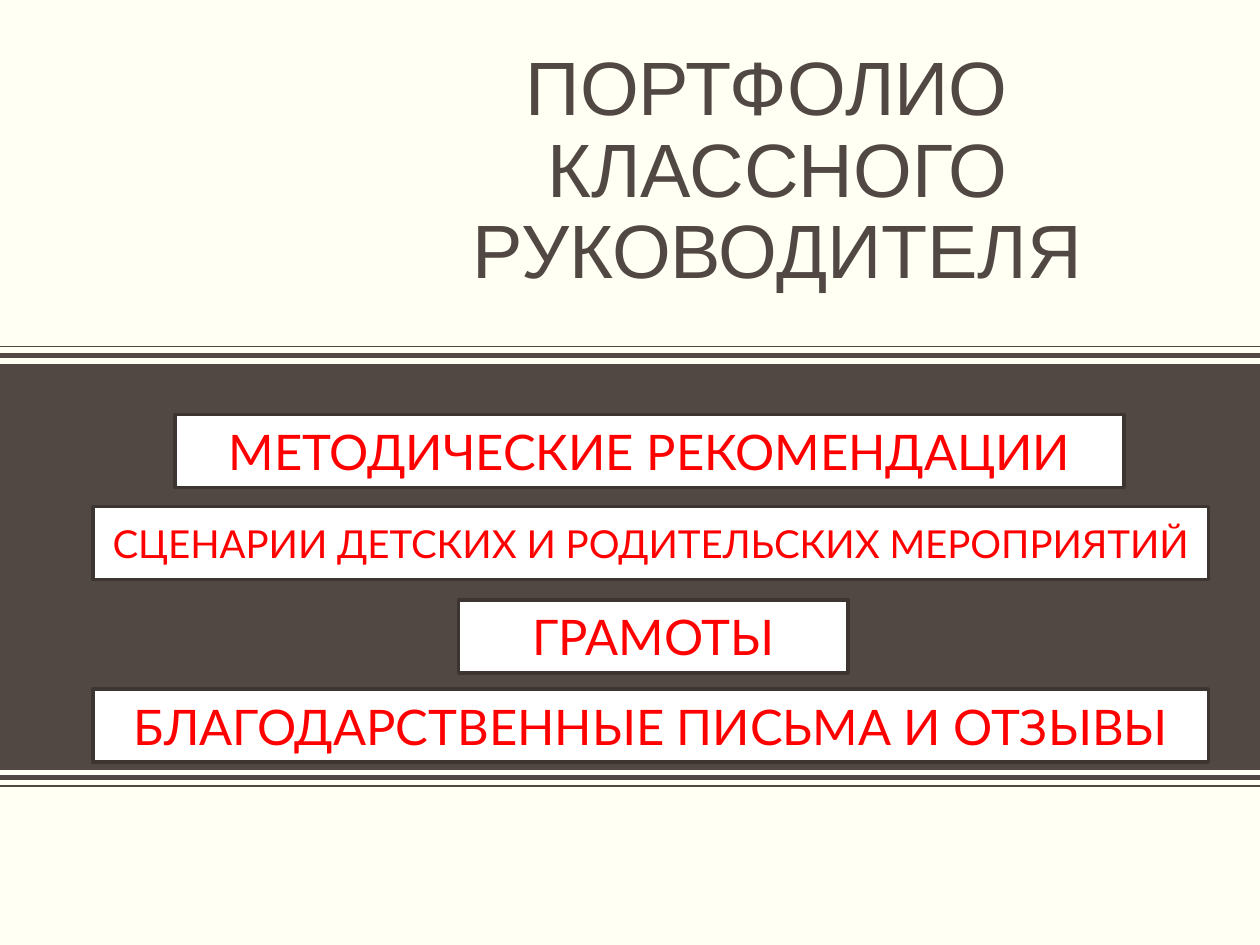
from pptx import Presentation
from pptx import util as u
from pptx.dml.color import RGBColor
from pptx.enum import shapes, text
from pptx.oxml.ns import qn
from lxml import etree

CREAM = RGBColor(0xFF, 0xFF, 0xF3)
BROWN = RGBColor(0x51, 0x48, 0x43)
EDGE = RGBColor(0x3C, 0x35, 0x32)
WHITE = RGBColor(0xFF, 0xFF, 0xFF)
RED = RGBColor(0xFF, 0x00, 0x00)


def add_rect(slide, box, fill):
    rect = slide.shapes.add_shape(
        shapes.MSO_SHAPE.RECTANGLE, *map(u.Inches, box))
    rect.shadow.inherit = False
    rect.fill.solid()
    rect.fill.fore_color.rgb = fill
    rect.line.fill.background()
    return rect


def add_rule(slide, left, top, width, weight):
    rule = slide.shapes.add_connector(
        shapes.MSO_CONNECTOR.STRAIGHT, u.Inches(left), u.Inches(top),
        u.Inches(left + width), u.Inches(top))
    rule.line.color.rgb = BROWN
    rule.line.width = u.Pt(weight)
    etree.SubElement(rule._element.spPr, qn("a:effectLst"))


def set_text(shape, words, color, spacing=1.0, **form):
    frame = shape.text_frame
    frame.word_wrap = True
    frame.vertical_anchor = text.MSO_ANCHOR.MIDDLE
    para = frame.paragraphs[0]
    para.text = words
    para.alignment = text.PP_ALIGN.CENTER
    para.line_spacing = spacing
    for run in para.runs:
        run.font.color.rgb = color
        for key, value in form.items():
            setattr(run.font, key, value)


def add_band(slide, left, top, width, height):
    """Dark band with a thick and a thin rule above and below it."""
    add_rect(slide, (left, top, width, height), BROWN)
    for gap, weight in ((0.07, 3), (0.14, 1)):
        add_rule(slide, left, top - gap, width, weight)
        add_rule(slide, left, top + height + gap - 0.01, width, weight)


def add_title(slide, box, words):
    title = slide.shapes.add_textbox(*map(u.Inches, box))
    title.text_frame.margin_left = title.text_frame.margin_right = 0
    set_text(title, words, BROWN, 0.9, name="Arial", size=u.Pt(43.2))


def add_label(slide, box, words, size):
    label = add_rect(slide, box, WHITE)
    label.line.color.rgb = EDGE
    label.line.width = u.Pt(2)
    set_text(label, words, RED, name="Lato", size=u.Pt(size))


def main():
    deck = Presentation()
    deck.slide_width, deck.slide_height = u.Inches(10), u.Inches(7.5)
    slide = deck.slides.add_slide(deck.slide_layouts[6])
    slide.background.fill.solid()
    slide.background.fill.fore_color.rgb = CREAM

    add_band(slide, 0, 2.89, 10, 3.22)
    add_title(slide, (2.04, 0.45, 8.26, 1.84),
              "ПОРТФОЛИО \vКЛАССНОГО РУКОВОДИТЕЛЯ")
    labels = (
        (1.39, 3.29, 7.53, "МЕТОДИЧЕСКИЕ РЕКОМЕНДАЦИИ", 28),
        (0.74, 4.02, 8.85,
         "СЦЕНАРИИ ДЕТСКИХ И РОДИТЕЛЬСКИХ МЕРОПРИЯТИЙ", 22),
        (3.64, 4.76, 3.09, "ГРАМОТЫ", 28),
        (0.74, 5.47, 8.85, "БЛАГОДАРСТВЕННЫЕ ПИСЬМА И ОТЗЫВЫ", 28),
    )
    for left, top, width, words, size in labels:
        add_label(slide, (left, top, width, 0.58), words, size)
    deck.save("out.pptx")


if __name__ == "__main__":
    main()
